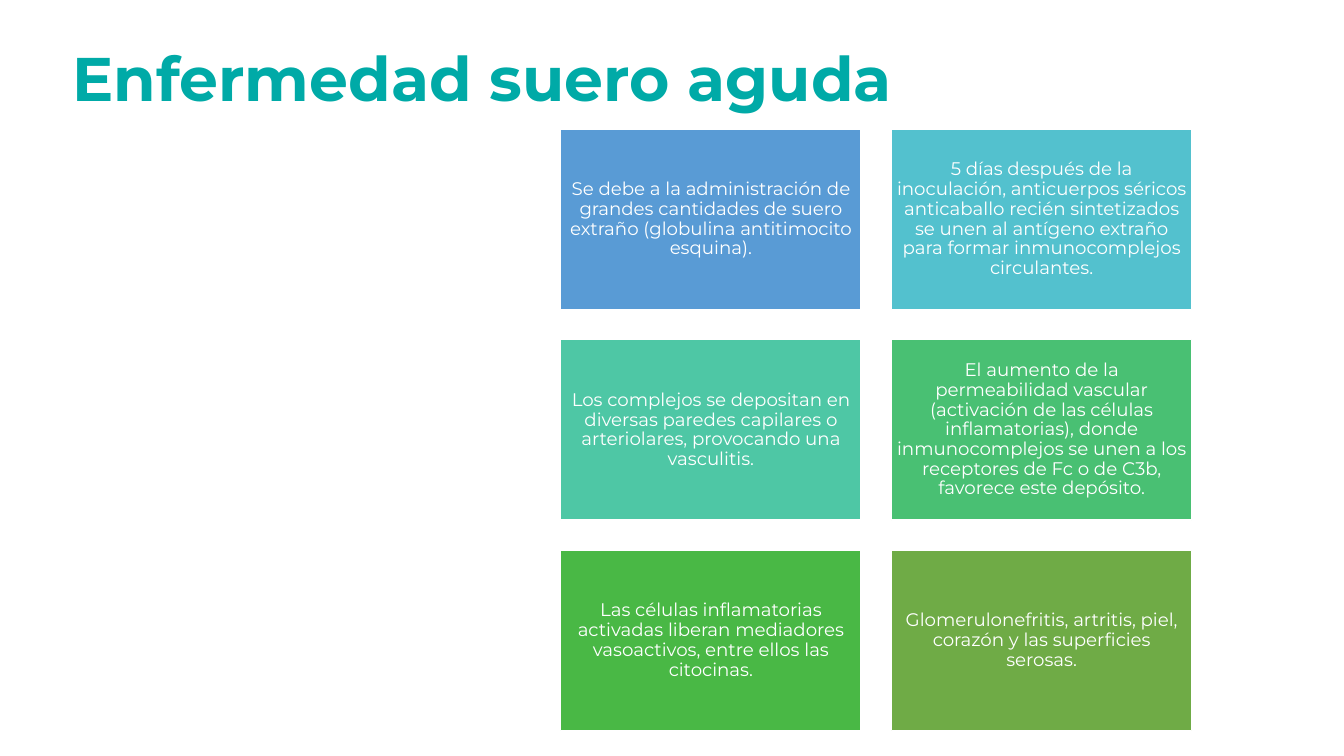
import pptx
import pptx.dml.color
import pptx.enum.shapes
import pptx.enum.text
import pptx.util

RGB = pptx.dml.color.RGBColor
ALIGN = pptx.enum.text.PP_ALIGN
WHITE = RGB(0xFF, 0xFF, 0xFF)
TEAL = RGB(0x00, 0xAA, 0xA7)
BLUE = RGB(0x59, 0x9B, 0xD5)
CYAN = RGB(0x53, 0xC1, 0xCE)
MINT = RGB(0x4E, 0xC7, 0xA5)
EMERALD = RGB(0x49, 0xC0, 0x73)
GREEN = RGB(0x49, 0xB8, 0x45)
OLIVE = RGB(0x6F, 0xAB, 0x46)

# Card grid, in inches
LEFT, TOP = 5.56, 1.28
CARD_W, CARD_H = 2.98, 1.79
GAP = 0.3
COLUMNS = 2

CARDS = [
    (BLUE, "Se debe a la administración de grandes cantidades de suero extraño "
           "(globulina antitimocito esquina)."),
    (CYAN, "5 días después de la inoculación, anticuerpos séricos anticaballo "
           "recién sintetizados se unen al antígeno extraño para formar "
           "inmunocomplejos circulantes."),
    (MINT, "Los complejos se depositan en diversas paredes capilares o "
           "arteriolares, provocando una vasculitis."),
    (EMERALD, "El aumento de la permeabilidad vascular (activación de las células "
              "inflamatorias), donde inmunocomplejos se unen a los receptores de "
              "Fc o de C3b, favorece este depósito."),
    (GREEN, "Las células inflamatorias activadas liberan mediadores vasoactivos, "
            "entre ellos las citocinas."),
    (OLIVE, "Glomerulonefritis, artritis, piel, corazón y las superficies serosas."),
]


def write(sp, text, *, size, color, bold=False, align=ALIGN.LEFT, inset=(0.1, 0.05)):
    """Fill a shape with one formatted, vertically centred paragraph."""
    tf = sp.text_frame
    tf.word_wrap = True
    tf.vertical_anchor = pptx.enum.text.MSO_ANCHOR.MIDDLE
    tf.margin_left = tf.margin_right = pptx.util.Inches(inset[0])
    tf.margin_top = tf.margin_bottom = pptx.util.Inches(inset[1])
    p = tf.paragraphs[0]
    p.alignment = align
    p.line_spacing = 0.9
    r = p.add_run()
    r.text = text
    r.font.name = "Montserrat"
    r.font.size = pptx.util.Pt(size)
    r.font.bold = bold
    r.font.color.rgb = color


class Deck:
    """Holds the presentation, its style and the current slide."""

    title_size, card_size = 44, 13

    def __init__(self):
        self.prs = pptx.Presentation()
        self.prs.slide_width = pptx.util.Inches(13.33)
        self.prs.slide_height = pptx.util.Inches(7.5)
        self.s = self.prs.slides.add_slide(self.prs.slide_layouts[6])

    def title(self, text):
        box = map(pptx.util.Inches, (0.62, 0.08, 11.5, 1.45))
        sp = self.s.shapes.add_textbox(*box)
        write(sp, text, size=self.title_size, color=TEAL, bold=True)

    def card(self, col, row, fill, text):
        box = (LEFT + col * (CARD_W + GAP), TOP + row * (CARD_H + GAP), CARD_W, CARD_H)
        sp = self.s.shapes.add_shape(pptx.enum.shapes.MSO_SHAPE.RECTANGLE,
                                     *map(pptx.util.Inches, box))
        sp.shadow.inherit = False
        sp.fill.solid()
        sp.fill.fore_color.rgb = fill
        sp.line.color.rgb = WHITE
        sp.line.width = pptx.util.Pt(1)
        write(sp, text, size=self.card_size, color=WHITE, align=ALIGN.CENTER,
              inset=(0.05, 0.05))


def main():
    deck = Deck()
    # Heading
    deck.title("Enfermedad suero aguda")
    # Cards, row by row
    for i, (fill, text) in enumerate(CARDS):
        row, col = divmod(i, COLUMNS)
        deck.card(col, row, fill, text)
    deck.prs.save("out.pptx")


if __name__ == "__main__":
    main()
